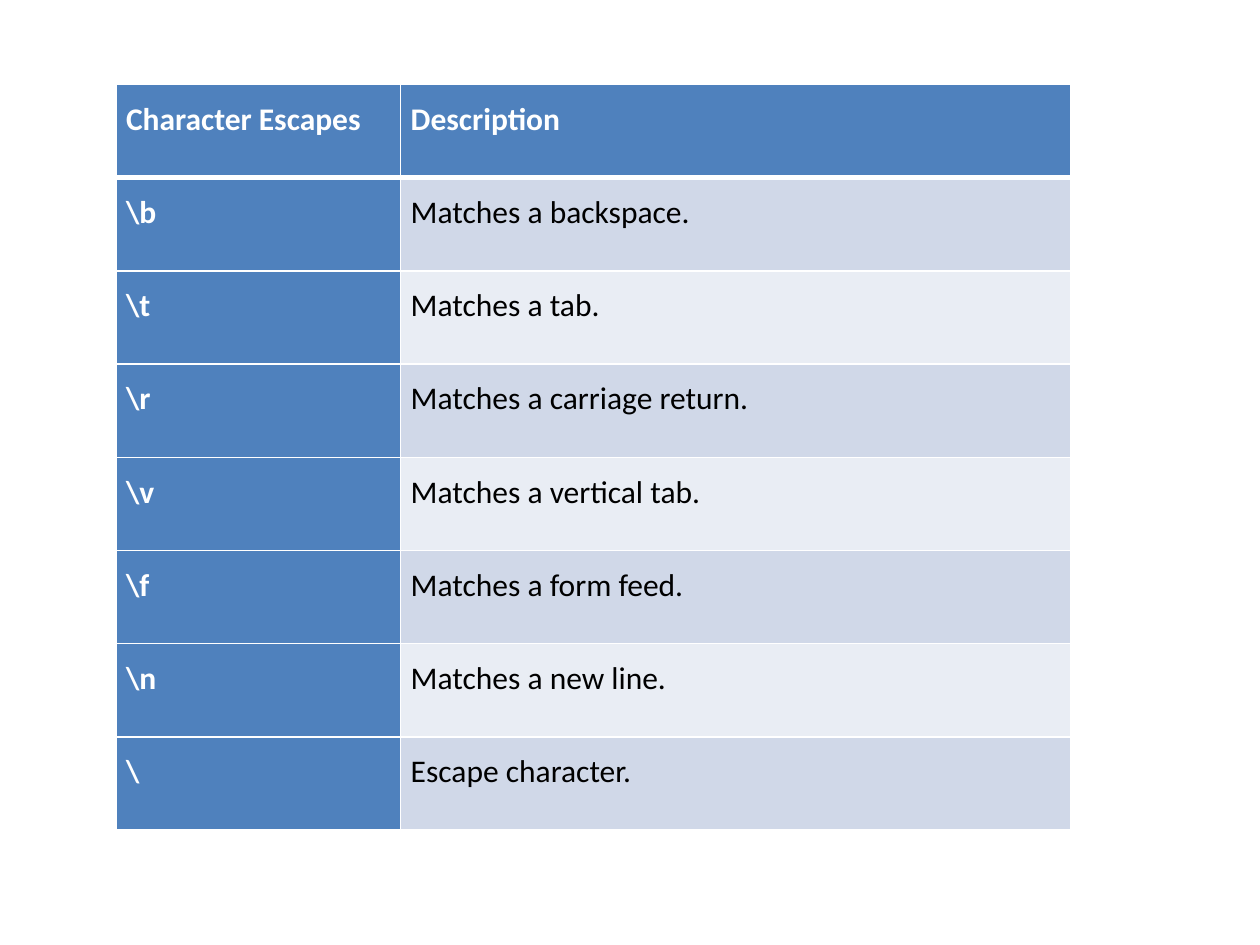
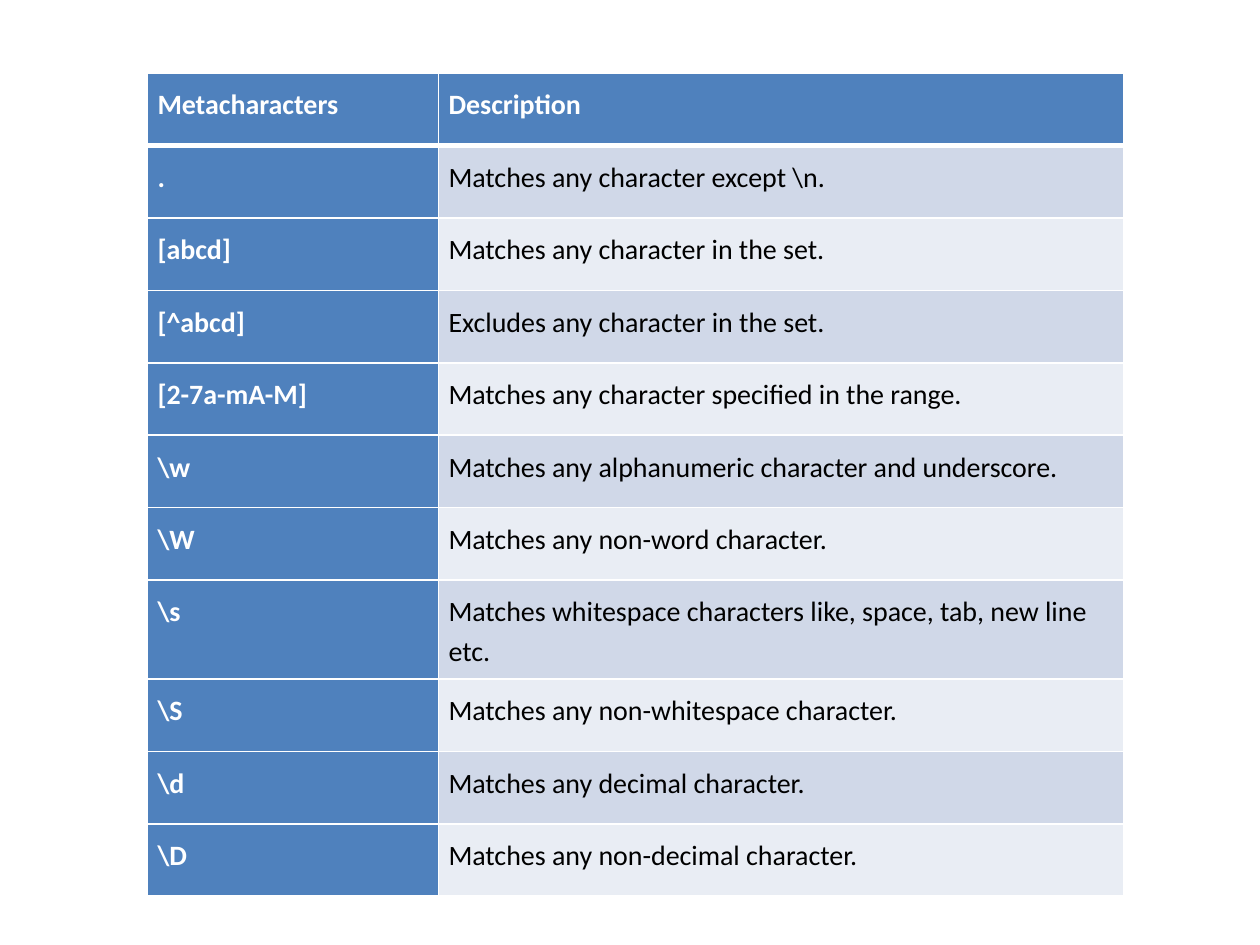
from lxml import etree
from pptx import Presentation
from pptx.dml.color import RGBColor
from pptx.oxml.ns import qn
from pptx.util import Pt

# Shared scale and style
PX = 914400 // 200
BLANK_LAYOUT = 6
FONT = "Calibri"
WHITE, BLACK, BLUE = "FFFFFF", "000000", "4F81BD"
BANDS = ("D0D8E8", "E9EDF4")
CELL_MARGIN = 16
THIN, THICK = 1, 3

CHARACTER_ESCAPES = [
    ("Character Escapes", "Description"),
    (r"\b", "Matches a backspace."),
    (r"\t", "Matches a tab."),
    (r"\r", "Matches a carriage return."),
    (r"\v", "Matches a vertical tab."),
    (r"\f", "Matches a form feed."),
    (r"\n", "Matches a new line."),
    ("\\", "Escape character."),
]

METACHARACTERS = [
    ("Metacharacters", "Description"),
    (".", r"Matches any character except \n."),
    ("[abcd]", "Matches any character in the set."),
    ("[^abcd]", "Excludes any character in the set."),
    ("[2-7a-mA-M]", "Matches any character specified in the range."),
    (r"\w", "Matches any alphanumeric character and underscore."),
    (r"\W", "Matches any non-word character."),
    (r"\s", "Matches whitespace characters like, space, tab, new line etc."),
    (r"\S", "Matches any non-whitespace character."),
    (r"\d", "Matches any decimal character."),
    (r"\D", "Matches any non-decimal character."),
]


def px(length):
    return length * PX


def color(hex_string):
    return RGBColor.from_string(hex_string)


def set_borders(cell, top, bottom):
    """Draw white borders; top and bottom widths are in points."""
    properties = cell._tc.get_or_add_tcPr()
    widths = {"a:lnL": THIN, "a:lnR": THIN, "a:lnT": top, "a:lnB": bottom}
    for tag, width in widths.items():
        line = etree.SubElement(properties, qn(tag), w=str(Pt(width)))
        fill = etree.SubElement(line, qn("a:solidFill"))
        etree.SubElement(fill, qn("a:srgbClr"), val=WHITE)


def write_cell(cell, text, size, emphasized):
    cell.margin_left = cell.margin_right = px(CELL_MARGIN)
    cell.margin_top = cell.margin_bottom = px(CELL_MARGIN)
    paragraph = cell.text_frame.paragraphs[0]
    paragraph.line_spacing = 1.15
    paragraph.space_after = Pt(15)
    run = paragraph.add_run()
    run.text = text
    run.font.name = FONT
    run.font.size = Pt(size)
    run.font.bold = emphasized
    run.font.color.rgb = color(WHITE if emphasized else BLACK)


def add_reference_table(slide, entries, left, top, widths, row_height, size):
    """Add a table with a blue header row, a blue key column and banded rows."""
    frame = slide.shapes.add_table(
        len(entries), len(widths), px(left), px(top),
        px(sum(widths)), px(row_height * len(entries)))
    table = frame.table
    table.first_row = table.horz_banding = False
    for column, width in zip(table.columns, widths):
        column.width = px(width)

    for row, entry in enumerate(entries):
        table.rows[row].height = px(row_height)
        for column, text in enumerate(entry):
            cell = table.cell(row, column)
            emphasized = row == 0 or column == 0
            set_borders(cell, THICK if row == 1 else THIN,
                        THICK if row == 0 else THIN)
            cell.fill.solid()
            band = BANDS[(row - 1) % 2]
            cell.fill.fore_color.rgb = color(BLUE if emphasized else band)
            write_cell(cell, text, size, emphasized)


def main():
    presentation = Presentation()
    presentation.slide_width = px(2000)
    presentation.slide_height = px(1500)
    layout = presentation.slide_layouts[BLANK_LAYOUT]

    # Character escapes
    slide = presentation.slides.add_slide(layout)
    add_reference_table(slide, CHARACTER_ESCAPES, left=184, top=134,
                        widths=(452, 1064), row_height=148, size=18)

    # Metacharacters
    slide = presentation.slides.add_slide(layout)
    add_reference_table(slide, METACHARACTERS, left=234, top=116,
                        widths=(462, 1088), row_height=115, size=16)

    presentation.save("out.pptx")


if __name__ == "__main__":
    main()
